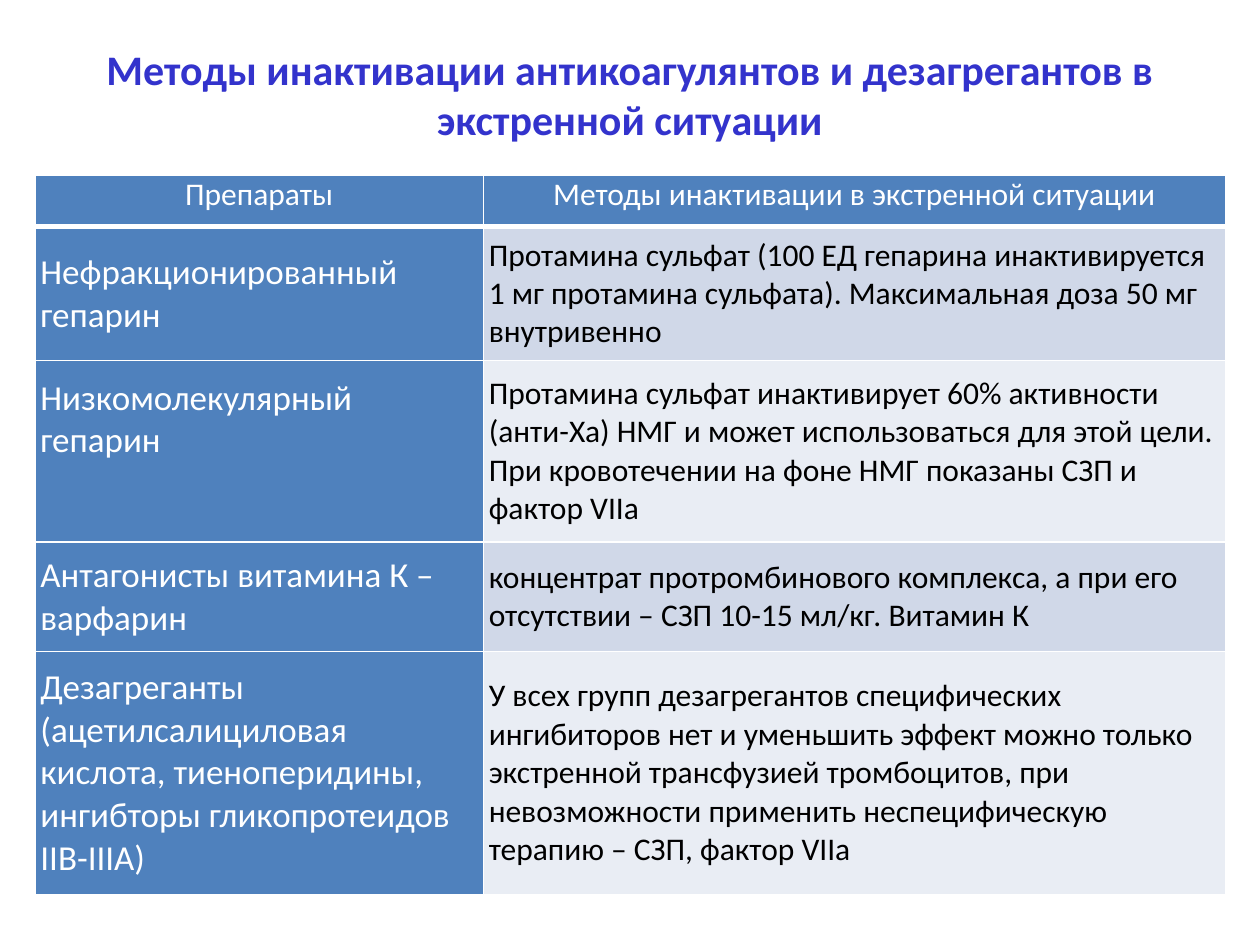
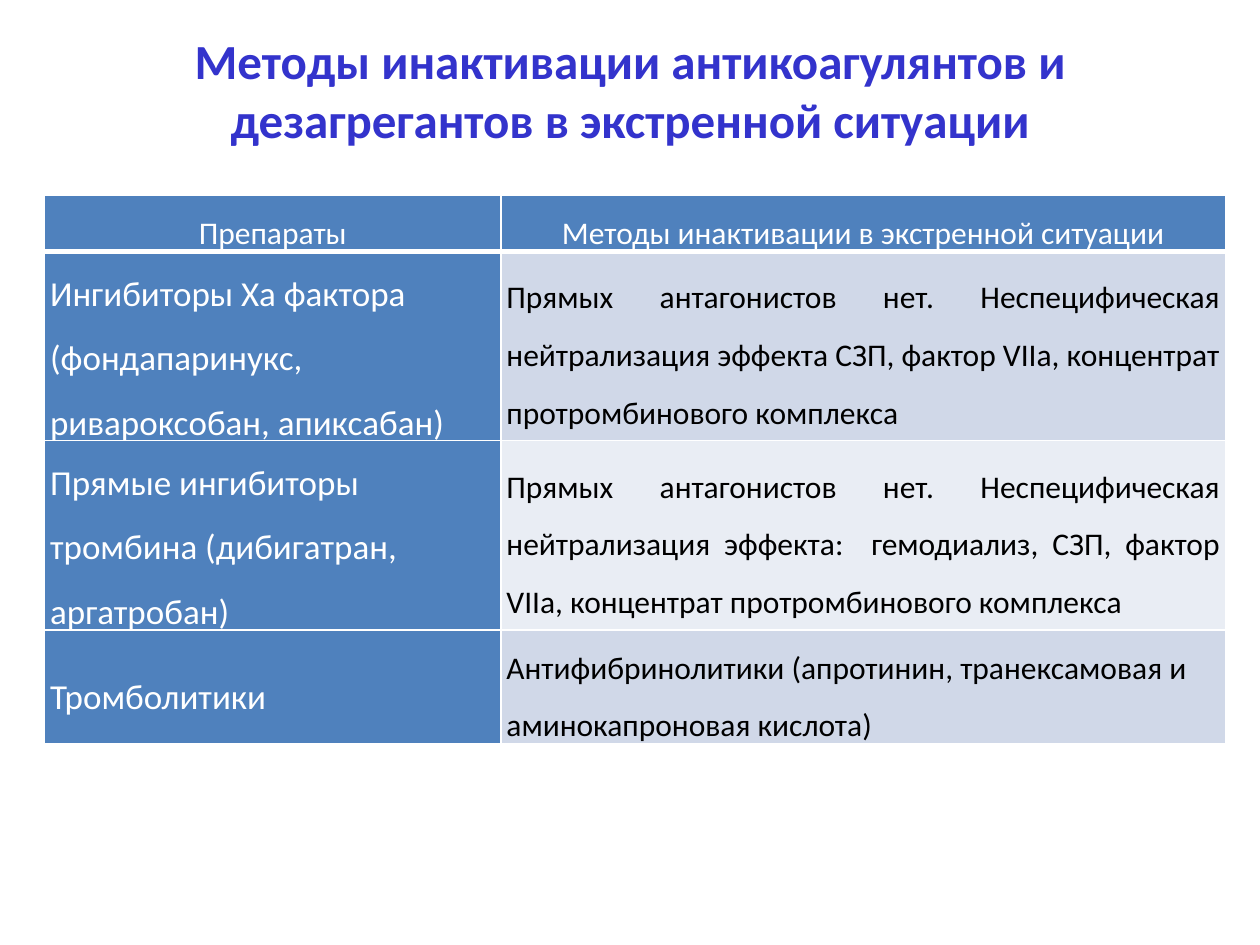
from lxml.etree import SubElement
from pptx import Presentation
from pptx.dml.color import RGBColor as Color
from pptx.enum.text import MSO_ANCHOR as Anchor, PP_ALIGN as Align
from pptx.oxml.ns import qn
from pptx.util import Pt

COLORS = {
    "title": "3333CC",
    "head": "4F81BD",
    "band_dark": "D0D8E8",
    "band_light": "E9EDF4",
    "white": "FFFFFF",
    "black": "000000",
}
FONT = "Calibri"
TITLE = "Методы инактивации антикоагулянтов и дезагрегантов в экстренной ситуации"
HEADINGS = ("Препараты", "Методы инактивации в экстренной ситуации")
TITLE_BOX = (36, 21.6, 648, 90)

HEPARINS = [
    ("Нефракционированный гепарин",
     "Протамина сульфат (100 ЕД гепарина инактивируется 1 мг протамина "
     "сульфата). Максимальная доза 50 мг внутривенно"),
    ("Низкомолекулярный гепарин",
     "Протамина сульфат инактивирует 60% активности (анти-Ха) НМГ и может "
     "использоваться для этой цели. При кровотечении на фоне НМГ показаны "
     "СЗП и фактор VIIa"),
    ("Антагонисты витамина К – варфарин",
     "концентрат протромбинового комплекса, а при его отсутствии – "
     "СЗП 10-15 мл/кг. Витамин К"),
    ("Дезагреганты (ацетилсалициловая кислота, тиеноперидины, ингибторы "
     "гликопротеидов IIB-IIIA)",
     "У всех групп дезагрегантов специфических ингибиторов нет и уменьшить "
     "эффект можно только экстренной трансфузией тромбоцитов, при "
     "невозможности применить неспецифическую терапию – СЗП, фактор VIIa"),
]
INHIBITORS = [
    ("Ингибиторы Ха фактора (фондапаринукс, ривароксобан, апиксабан)",
     "Прямых антагонистов нет. Неспецифическая нейтрализация эффекта СЗП, "
     "фактор VIIa, концентрат протромбинового комплекса"),
    ("Прямые ингибиторы тромбина (дибигатран, аргатробан)",
     "Прямых антагонистов нет. Неспецифическая нейтрализация эффекта:  "
     "гемодиализ, СЗП, фактор VIIa, концентрат протромбинового комплекса"),
    ("Тромболитики",
     "Антифибринолитики (апротинин, транексамовая и аминокапроновая кислота)"),
]


def set_all(target, values):
    for name, value in values.items():
        setattr(target, name, value)


def write(para, text, size, color, bold=False, **layout):
    set_all(para, layout)
    span = para.add_run()
    span.text = text
    set_all(span.font, {"name": FONT, "size": Pt(size), "bold": bold})
    span.font.color.rgb = Color.from_string(COLORS[color])


def add_title(page, box, size):
    frame = page.shapes.add_textbox(*map(Pt, box)).text_frame
    # The bottom margin lifts the two lines above the middle of the box
    set_all(frame, {"word_wrap": True, "vertical_anchor": Anchor.MIDDLE,
                    "margin_bottom": Pt(3.6 + 1.1 * size)})
    write(frame.paragraphs[0], TITLE, size, "title", bold=True,
          alignment=Align.CENTER)


def add_borders(cell, bottom_width):
    widths = {"lnL": 1, "lnR": 1, "lnT": 1, "lnB": bottom_width}
    for side, width in widths.items():
        line = SubElement(cell._tc.get_or_add_tcPr(), qn(f"a:{side}"),
                          w=str(Pt(width)))
        fill = SubElement(line, qn("a:solidFill"))
        SubElement(fill, qn("a:srgbClr"), val=COLORS["white"])


def fill_cell(cell, text, row, column, spacing, alignment, space_below):
    is_header = row == 0
    is_label = is_header or column == 0
    band = "band_dark" if row % 2 else "band_light"
    add_borders(cell, 3 if is_header else 1)
    cell.fill.solid()
    cell.fill.fore_color.rgb = Color.from_string(
        COLORS["head" if is_label else band])
    set_all(cell, {
        "margin_left": Pt(3.1), "margin_right": Pt(3.1),
        "margin_top": 0, "margin_bottom": Pt(space_below),
        "vertical_anchor": Anchor.TOP if is_header else Anchor.MIDDLE,
    })
    write(cell.text_frame.paragraphs[0], text,
          20 if is_label and not is_header else 18,
          "white" if is_label else "black",
          alignment=Align.CENTER if is_header else alignment,
          line_spacing=spacing, space_before=Pt(6), space_after=Pt(6))


def add_drug_table(page, corner, widths, heights, drugs, spacing=1.0,
                   justified=(), space_below=None):
    space_below = space_below or {}
    rows = [HEADINGS, *drugs]
    box = (*corner, sum(widths), sum(heights))
    table = page.shapes.add_table(len(rows), 2, *map(Pt, box)).table
    for column, width in zip(table.columns, widths):
        column.width = Pt(width)
    for r, (texts, height) in enumerate(zip(rows, heights)):
        table.rows[r].height = Pt(height)
        for c, text in enumerate(texts):
            alignment = Align.JUSTIFY if c and r in justified else Align.LEFT
            fill_cell(table.cell(r, c), text, r, c, spacing, alignment,
                      space_below.get((r, c), 0))


def add_heparin_page(deck):
    page = deck.slides.add_slide(deck.slide_layouts[6])
    add_title(page, TITLE_BOX, 24)
    add_drug_table(page, (20, 100.4), (256.2, 424.1),
                   (29.2, 76.5, 103.7, 62.4, 139), HEPARINS,
                   space_below={(2, 0): 36.4})


def add_inhibitor_page(deck):
    page = deck.slides.add_slide(deck.slide_layouts[6])
    add_title(page, TITLE_BOX, 28)
    add_drug_table(page, (25.5, 111.4), (260.8, 414), (29.5, 76.3, 92.2, 45.4),
                   INHIBITORS, spacing=1.5, justified=(1, 2))


def main():
    deck = Presentation()
    set_all(deck, {"slide_width": Pt(720), "slide_height": Pt(540)})
    add_heparin_page(deck)
    add_inhibitor_page(deck)
    deck.save("out.pptx")


if __name__ == "__main__":
    main()
